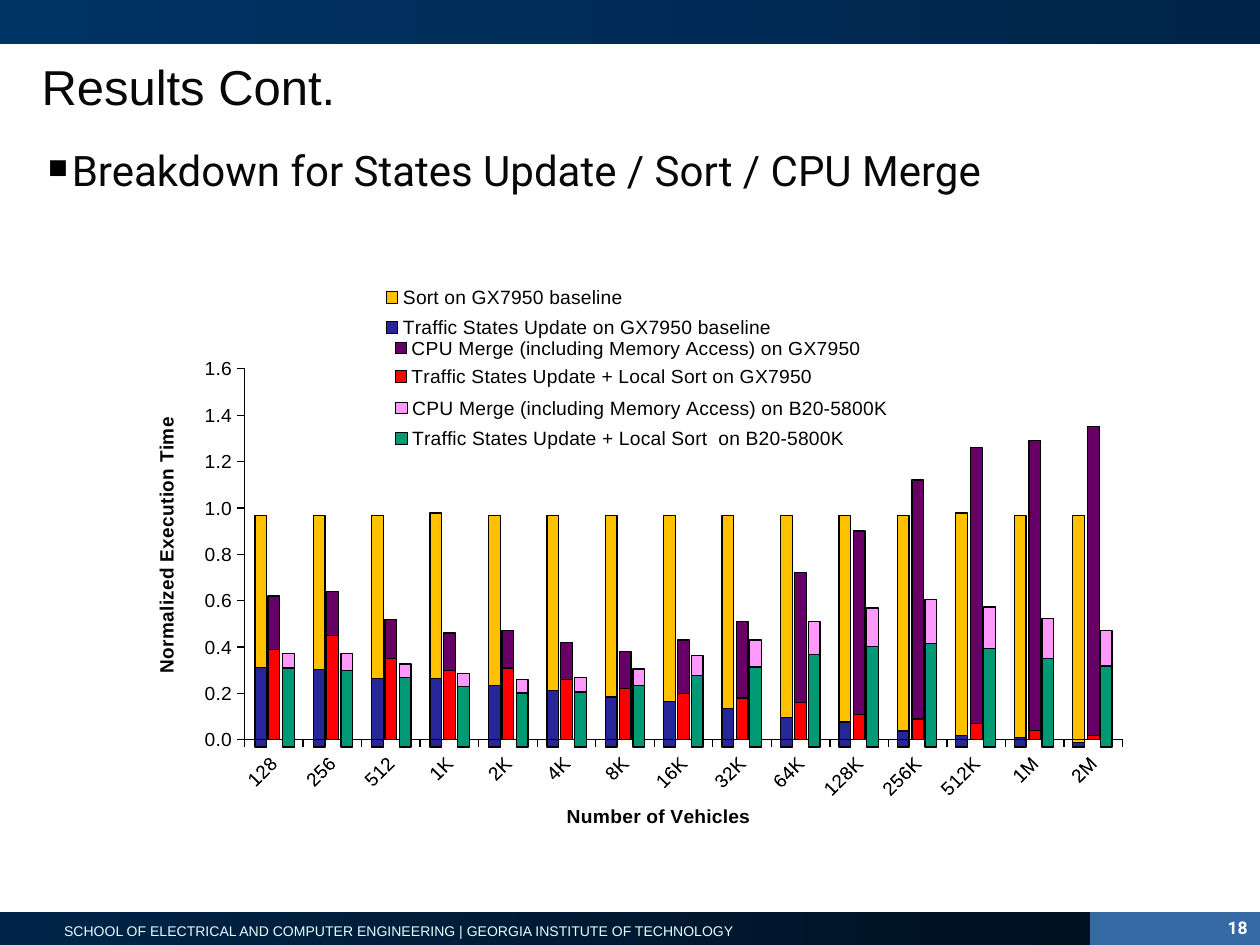
from dataclasses import dataclass

from pptx import Presentation
from pptx.chart import data
from pptx.dml.color import RGBColor
from pptx.enum import chart as ch, shapes, text
from pptx.oxml import parse_xml
from pptx.oxml.ns import nsdecls
from pptx.util import Inches, Pt


@dataclass(frozen=True)
class Theme:
    font: str = "Arial"
    body_font: str = "Roboto"
    ink: str = "080808"
    black: str = "000000"
    white: str = "FFFFFF"
    footer_ink: str = "E5FFFF"
    badge: str = "366AA4"
    navy: tuple = ("002448", "003366")
    night: tuple = ("001121", "002448")
    title_size: int = 28
    body_size: int = 24
    chart_size: int = 11
    number_size: int = 10
    footer_size: int = 8


def rgb(value):
    return RGBColor.from_string(value)


def place(parent, index, x, y, w=None, h=None, inner=False):
    """Give a chart part a manual layout in fractions of the chart."""
    for old in parent.xpath("./c:layout"):
        parent.remove(old)
    target = '<c:layoutTarget val="inner"/>' if inner else ""
    sizes = "" if w is None else f'<c:w val="{w}"/><c:h val="{h}"/>'
    parent.insert(index, parse_xml(
        f'<c:layout {nsdecls("c")}><c:manualLayout>{target}'
        '<c:xMode val="edge"/><c:yMode val="edge"/>'
        f'<c:x val="{x}"/><c:y val="{y}"/>{sizes}</c:manualLayout></c:layout>'))


def no_fill():
    return parse_xml(f'<c:spPr {nsdecls("c", "a")}><a:noFill/><a:ln><a:noFill/></a:ln></c:spPr>')


class SlideBuilder:
    def __init__(self, slide, theme):
        self.slide, self.theme = slide, theme

    def bar(self, box, fill):
        """Rectangle with a plain fill, or a two-colour gradient."""
        sp = self.slide.shapes.add_shape(shapes.MSO_SHAPE.RECTANGLE, *map(Inches, box))
        sp.shadow.inherit = False
        sp.line.fill.background()
        if isinstance(fill, str):
            sp.fill.solid()
            sp.fill.fore_color.rgb = rgb(fill)
        else:
            sp.fill.gradient()
            sp.fill.gradient_angle = 180
            for stop, color in zip(sp.fill.gradient_stops, fill):
                stop.color.rgb = rgb(color)

    def label(self, box, words, size, color, font=None, bold=False, wrap=True, inset=(0, 0),
              align=text.PP_ALIGN.LEFT, anchor=text.MSO_ANCHOR.TOP, spacing=1.0):
        tf = self.slide.shapes.add_textbox(*map(Inches, box)).text_frame
        tf.word_wrap = wrap
        tf.vertical_anchor = anchor
        tf.margin_left = tf.margin_right = Inches(inset[0])
        tf.margin_top = tf.margin_bottom = Inches(inset[1])
        p = tf.paragraphs[0]
        p.text = words
        p.alignment, p.line_spacing = align, spacing
        p.font.name = font or self.theme.font
        p.font.size, p.font.bold = Pt(size), bold
        p.font.color.rgb = rgb(color)
        return p

    def bullet(self, box, words):
        p = self.label(box, words, self.theme.body_size, self.theme.ink,
                       self.theme.body_font, spacing=0.98)
        p.space_before = Pt(6)
        props = p._p.get_or_add_pPr()
        props.set("marL", str(Inches(0.19)))
        props.set("indent", str(-Inches(0.19)))
        for tag in (f'<a:buClr {nsdecls("a")}><a:srgbClr val="{self.theme.black}"/></a:buClr>',
                    f'<a:buSzPct {nsdecls("a")} val="65000"/>',
                    f'<a:buChar {nsdecls("a")} char="■"/>'):
            # bullet settings come before the default run properties
            props.xpath("./a:defRPr")[0].addprevious(parse_xml(tag)) \
                if props.xpath("./a:defRPr") else props.append(parse_xml(tag))

    def columns(self, box, plot, legend, categories, series, top):
        """Stacked columns on a clear background; series is (name, colour, values)."""
        cd = data.CategoryChartData()
        cd.categories = categories
        for name, _, values in series:
            cd.add_series(name, values)
        chart = self.slide.shapes.add_chart(
            ch.XL_CHART_TYPE.COLUMN_STACKED, *map(Inches, box), cd).chart
        chart.has_title = False
        chart.font.name = self.theme.font
        chart.font.size = Pt(self.theme.chart_size)
        chart.font.color.rgb = rgb(self.theme.black)

        bars = chart.plots[0]
        bars.gap_width, bars.overlap, bars.vary_by_categories = 400, 100, False
        for s, (_, color, _) in zip(bars.series, series):
            s.format.fill.solid()
            s.format.fill.fore_color.rgb = rgb(color)
            self.outline(s.format.line)

        chart.value_axis.has_major_gridlines = False
        chart.value_axis.minimum_scale = 0
        chart.value_axis.maximum_scale = top

        chart.has_legend = True
        chart.legend.position = ch.XL_LEGEND_POSITION.RIGHT
        chart.legend.include_in_layout = False
        chart.legend.font.size = Pt(self.theme.chart_size)
        place(chart.element.xpath(".//c:legend")[0], 1, *legend)

        area = chart.element.xpath(".//c:plotArea")[0]
        place(area, 0, *plot, inner=True)
        area.append(no_fill())
        chart.element.xpath("./c:chart")[0].addnext(no_fill())
        return chart

    def outline(self, line):
        line.color.rgb = rgb(self.theme.black)
        line.width = Pt(0.75)

    def hide_axes(self, chart):
        chart.category_axis.visible = chart.value_axis.visible = False

    def axis(self, axis, title, x, y):
        axis.major_tick_mark = ch.XL_TICK_MARK.OUTSIDE
        axis.tick_labels.font.size = Pt(self.theme.chart_size)
        self.outline(axis.format.line)
        p = axis.axis_title.text_frame.paragraphs[0]
        p.text = title
        p.font.size, p.font.bold = Pt(self.theme.chart_size), True
        place(axis.axis_title.element, 1, x, y)


def main():
    theme = Theme()
    prs = Presentation()
    prs.slide_width, prs.slide_height = Inches(10), Inches(7.5)
    b = SlideBuilder(prs.slides.add_slide(prs.slide_layouts[6]), theme)

    # Header and footer bands
    b.bar((8.64, 7.24, 1.36, 0.26), theme.badge)
    b.bar((0, 7.24, 8.65, 0.26), theme.night)
    b.label((0.38, 7.27, 5.58, 0.24),
            "SCHOOL OF ELECTRICAL AND COMPUTER ENGINEERING | GEORGIA INSTITUTE OF TECHNOLOGY",
            theme.footer_size, theme.footer_ink, wrap=False, inset=(0.1, 0.05),
            align=text.PP_ALIGN.CENTER)
    b.bar((0, 0, 10, 0.35), theme.navy)

    # Three overlaid charts, shifted so that their columns stand side by side
    vehicles = ["128", "256", "512", "1K", "2K", "4K", "8K", "16K", "32K", "64K",
                "128K", "256K", "512K", "1M", "2M"]
    ranks = [str(n) for n in range(1, len(vehicles) + 1)]
    side_plot = (0.122, 0.214, 0.877, 0.657)
    baseline = b.columns(
        (0.87, 2.01, 7.93, 4.5), side_plot, (0.26, 0.045, 0.42, 0.12), ranks,
        [("Traffic States Update on GX7950 baseline", "262699",
          [35, 34, 30, 30, 27, 25, 22, 20, 17, 13, 11, 7, 5, 4, 2]),
         ("Sort on GX7950 baseline", "FFC000",
          [67, 68, 72, 73, 75, 77, 80, 82, 85, 89, 91, 95, 98, 98, 100])], 164)
    b.hide_axes(baseline)

    discrete = b.columns(
        (1.1, 1.99, 7.93, 4.62), (0.106, 0.206, 0.879, 0.647), (0.24, 0.14, 0.5, 0.11), vehicles,
        [("Traffic States Update + Local Sort on GX7950", "FF0000",
          [0.39, 0.45, 0.35, 0.3, 0.31, 0.26, 0.22, 0.2, 0.18, 0.16, 0.11, 0.09, 0.07, 0.04, 0.02]),
         ("CPU Merge (including Memory Access) on GX7950", "660066",
          [0.23, 0.19, 0.17, 0.16, 0.16, 0.16, 0.16, 0.23, 0.33, 0.56, 0.79, 1.03, 1.19, 1.25,
           1.33])], 1.6)
    b.axis(discrete.category_axis, "Number of Vehicles", 0.425, 0.957)
    b.axis(discrete.value_axis, "Normalized Execution Time", 0.011, 0.29)
    discrete.value_axis.major_unit = 0.2
    discrete.value_axis.tick_labels.number_format = "#,##0.0"
    discrete.value_axis.tick_labels.number_format_is_linked = False
    discrete.element.xpath(".//c:catAx/c:txPr/a:bodyPr")[0].set("rot", "-2700000")

    fused = b.columns(
        (1.09, 2.01, 7.93, 4.5), side_plot, (0.24, 0.24, 0.53, 0.12), ranks,
        [("Traffic States Update + Local Sort  on B20-5800K", "009973",
          [76, 74, 67, 58, 52, 53, 59, 69, 77, 89, 97, 100, 95, 85, 78]),
         ("CPU Merge (including Memory Access) on B20-5800K", "FF99FF",
          [14, 16, 13, 13, 13, 14, 16, 19, 26, 32, 37, 42, 40, 39, 34])], 359)
    b.hide_axes(fused)

    # Title, bullet and slide number
    b.label((0.33, 0.42, 9.3, 0.57), "Results Cont.", theme.title_size, theme.ink,
            anchor=text.MSO_ANCHOR.MIDDLE, spacing=0.93)
    b.bullet((0.38, 1.17, 9.3, 5.53), "Breakdown for States Update / Sort / CPU Merge")
    b.label((9.44, 7.24, 0.56, 0.26), "18", theme.number_size, theme.white, theme.body_font,
            bold=True, inset=(0.1, 0.05), align=text.PP_ALIGN.RIGHT, spacing=0.98)

    prs.save("out.pptx")


if __name__ == "__main__":
    main()
